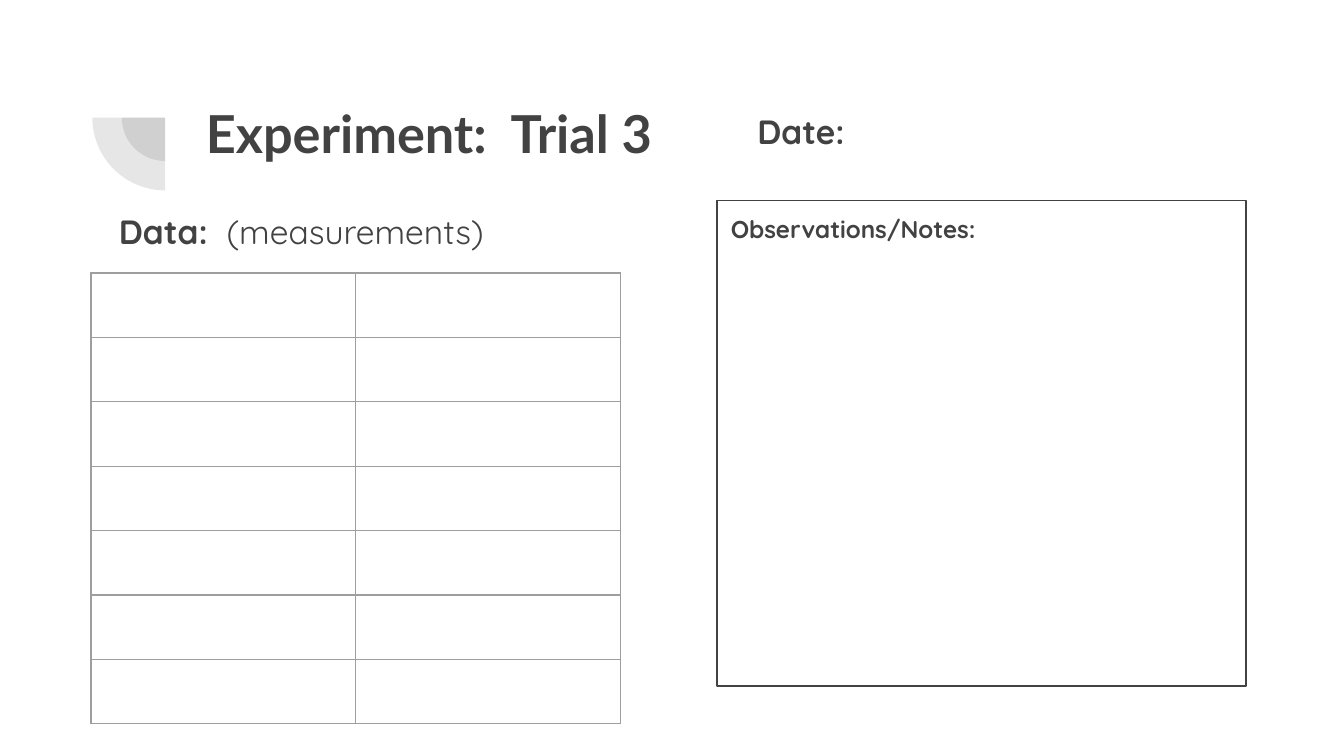
from lxml import etree
from pptx import Presentation
from pptx.dml.color import RGBColor
from pptx.enum.shapes import MSO_SHAPE
from pptx.enum.text import MSO_ANCHOR, PP_ALIGN
from pptx.oxml import parse_xml
from pptx.oxml.ns import nsdecls, qn
from pptx.util import Emu, Pt

PIE, RECT = MSO_SHAPE.PIE, MSO_SHAPE.RECTANGLE
TOP, LEFT = MSO_ANCHOR.TOP, PP_ALIGN.LEFT
DARK = RGBColor(0x42, 0x42, 0x42)
GRID = RGBColor(0x9E, 0x9E, 0x9E)
HEADING, BODY = "Lato", "Quicksand"
PX = 9525  # EMU in one px, 96 px to the inch


def px(*lengths):
    return [Emu(n * PX) for n in lengths]


def write(shape, size, font, *parts):
    """Fill a shape with one paragraph of (text, bold) parts."""
    tf = shape.text_frame
    tf.word_wrap = True
    tf.vertical_anchor = TOP
    tf.margin_left, tf.margin_top, tf.margin_right, tf.margin_bottom = px(10, 10, 10, 10)
    p = tf.paragraphs[0]
    p.alignment = LEFT
    for text, bold in parts:
        r = p.add_run()
        r.text = text
        r.font.name, r.font.size, r.font.bold = font, Pt(size), bold
        r.font.color.rgb = DARK


def add_text(s, box, size, font, *parts):
    write(s.shapes.add_textbox(*px(*box)), size, font, *parts)


def add_quarter(s, cx, cy, radius):
    """Translucent lower-left quarter of a disc around (cx, cy)."""
    sp = s.shapes.add_shape(PIE, *px(cx - radius, cy - radius, 2 * radius, 2 * radius))
    sp.adjustments[0], sp.adjustments[1] = 108, 162
    sp.rotation = 270
    sp.shadow.inherit = False
    sp.line.fill.background()
    sp.fill.solid()
    sp.fill.fore_color.rgb = DARK
    color = sp.fill._xPr.find(".//" + qn("a:srgbClr"))
    etree.SubElement(color, qn("a:alpha")).set("val", "13000")


def add_notes_box(s, box, title):
    sp = s.shapes.add_shape(RECT, *px(*box))
    sp.shadow.inherit = False
    sp.fill.background()
    sp.line.color.rgb = DARK
    sp.line.width = Pt(0.75)
    write(sp, 13, BODY, (title, True))


def set_borders(cell):
    tc_pr = cell._tc.get_or_add_tcPr()
    for side in ("lnL", "lnR", "lnT", "lnB"):
        tc_pr.append(parse_xml(
            f'<a:{side} {nsdecls("a")} w="{Pt(0.75)}"><a:solidFill>'
            f'<a:srgbClr val="{GRID}"/></a:solidFill></a:{side}>'))


def add_empty_table(s, left, top, rows, cols, row_height, col_width):
    frame = s.shapes.add_table(
        rows, cols, *px(left, top, cols * col_width, rows * row_height))
    table = frame.table
    table.first_row = table.horz_banding = False
    for cell in table.iter_cells():
        set_borders(cell)
        cell.fill.background()


def main():
    prs = Presentation()
    prs.slide_width, prs.slide_height = px(960, 540)
    s = prs.slides.add_slide(prs.slide_layouts[6])

    # Corner ornament
    for radius in (31, 52):
        add_quarter(s, 118, 84, radius)

    # Headings
    add_text(s, (137, 62, 738, 105), 28, HEADING, ("Experiment:  Trial 3", True))
    add_text(s, (531, 69, 405, 43), 18, BODY, ("Date:", True))

    # Observations
    add_notes_box(s, (512, 143, 378, 347), "Observations/Notes:")

    # Measurements
    add_text(s, (75, 141, 405, 43), 18, BODY, ("Data:  ", True), ("(measurements)", False))
    add_empty_table(s, 65, 195, rows=7, cols=2, row_height=46, col_width=189)

    prs.save("out.pptx")


if __name__ == "__main__":
    main()
